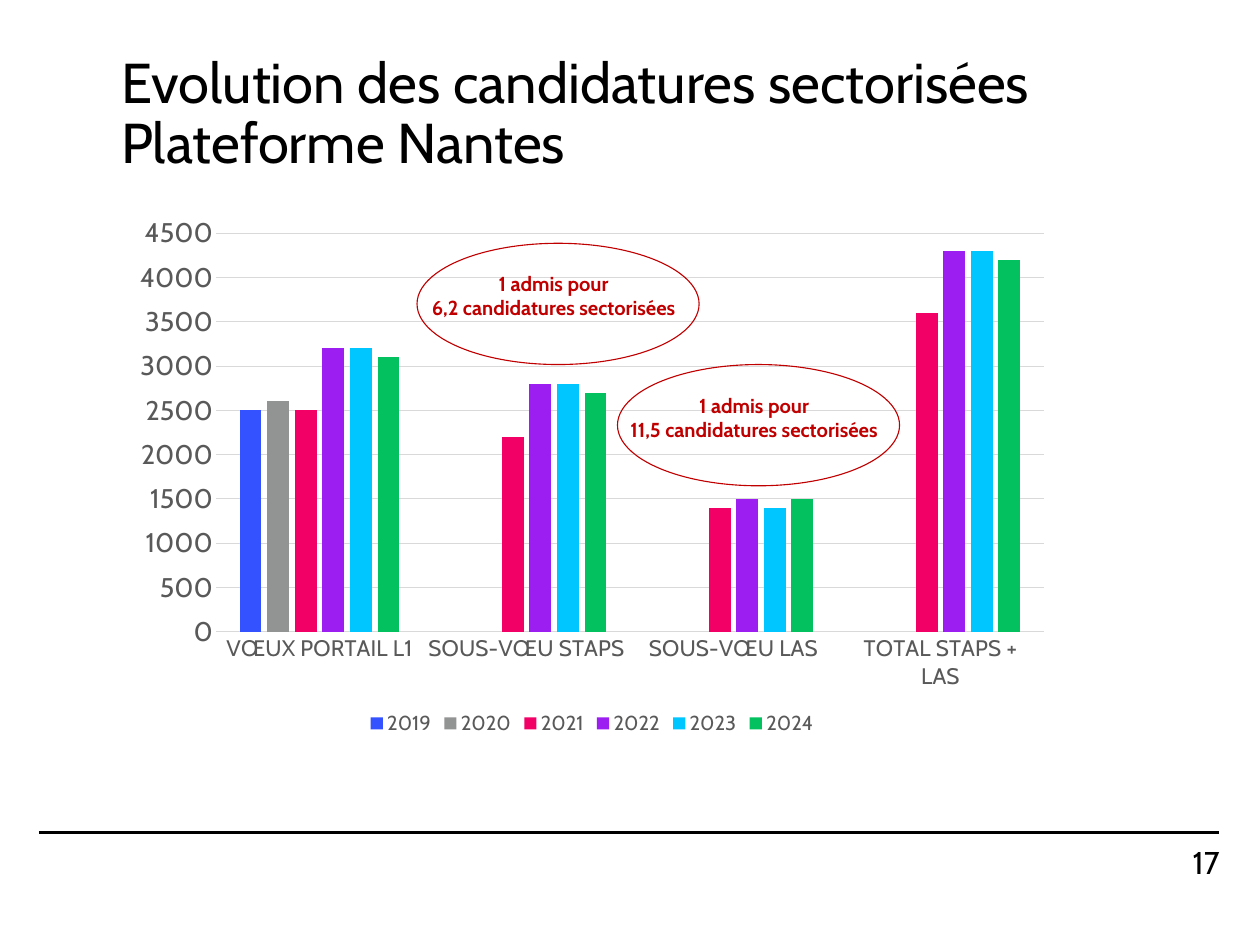
from dataclasses import dataclass
from typing import Optional

import pptx
import pptx.chart.data
import pptx.dml.color
import pptx.enum.chart
import pptx.enum.shapes
import pptx.enum.text
import pptx.oxml
import pptx.util

Pt = pptx.util.Pt
ALIGN = pptx.enum.text.PP_ALIGN
ANCHOR = pptx.enum.text.MSO_ANCHOR

FONT = "Cabin"
BLACK, GREY, GRID, RED = "000000", "595959", "D9D9D9", "C00000"


@dataclass
class YearSeries:
    year: str
    color: str
    values: tuple[Optional[int], ...]


@dataclass
class Callout:
    left: float
    top: float
    lines: tuple[str, ...]


CATEGORIES = ("VŒUX PORTAIL L1", "SOUS-VŒU STAPS", "SOUS-VŒU LAS", "TOTAL STAPS + LAS")
YEARS = (
    YearSeries("2019", "3452FF", (2500, None, None, None)),
    YearSeries("2020", "929393", (2600, None, None, None)),
    YearSeries("2021", "F20066", (2500, 2200, 1400, 3600)),
    YearSeries("2022", "9C1EF1", (3200, 2800, 1500, 4300)),
    YearSeries("2023", "00C6FF", (3200, 2800, 1400, 4300)),
    YearSeries("2024", "03C15E", (3100, 2700, 1500, 4200)),
)
CALLOUTS = (
    Callout(371.5, 216.7, ("1 admis pour", "6,2 candidatures sectorisées")),
    Callout(550.1, 324.7, ("1 admis pour", "11,5 candidatures sectorisées")),
)


def rgb(color: str) -> pptx.dml.color.RGBColor:
    return pptx.dml.color.RGBColor.from_string(color)


def set_font(font, size: float, color: str, bold: bool = False) -> None:
    font.name, font.size, font.bold = FONT, Pt(size), bold
    font.color.rgb = rgb(color)


def set_line(line, color: str, width: float) -> None:
    line.color.rgb = rgb(color)
    line.width = Pt(width)


def add_text(shapes, lines, left: float, top: float, width: float, height: float, *,
             size: float, color: str = BLACK, bold: bool = False, align=ALIGN.LEFT,
             anchor=ANCHOR.TOP, spacing: Optional[float] = None,
             inset: Optional[float] = None) -> None:
    sp = shapes.add_textbox(Pt(left), Pt(top), Pt(width), Pt(height))
    tf = sp.text_frame
    tf.word_wrap = True
    tf.vertical_anchor = anchor
    if inset is not None:
        tf.margin_left = tf.margin_top = tf.margin_right = tf.margin_bottom = Pt(inset)
    for i, line in enumerate(lines):
        p = tf.add_paragraph() if i else tf.paragraphs[0]
        p.alignment = align
        if spacing:
            p.line_spacing = spacing
        r = p.add_run()
        r.text = line
        set_font(r.font, size, color, bold)


def add_rule(s) -> None:
    sp = s.shapes.add_connector(pptx.enum.shapes.MSO_CONNECTOR.STRAIGHT,
                                Pt(34.6), Pt(741.6), Pt(1085.8), Pt(741.6))
    set_line(sp.line, BLACK, 2)
    ns = "http://schemas.openxmlformats.org/drawingml/2006/main"
    sp._element.spPr.append(pptx.oxml.parse_xml(f'<a:effectLst xmlns:a="{ns}"/>'))


def add_applications_chart(s) -> None:
    data = pptx.chart.data.CategoryChartData()
    data.categories = CATEGORIES
    for item in YEARS:
        data.add_series(item.year, item.values)
    chart = s.shapes.add_chart(pptx.enum.chart.XL_CHART_TYPE.COLUMN_CLUSTERED,
                               Pt(108), Pt(183.6), Pt(838.8), Pt(475.2), data).chart
    set_font(chart.font, 10, BLACK)
    chart.has_title = False

    # Columns
    plot = chart.plots[0]
    plot.gap_width, plot.overlap, plot.vary_by_categories = 219, -27, False
    for series, item in zip(plot.series, YEARS):
        series.format.fill.solid()
        series.format.fill.fore_color.rgb = rgb(item.color)

    # Axes
    cat, val = chart.category_axis, chart.value_axis
    for axis, size in ((cat, 20), (val, 24)):
        axis.major_tick_mark = axis.minor_tick_mark = pptx.enum.chart.XL_TICK_MARK.NONE
        set_font(axis.tick_labels.font, size, GREY)
    set_line(cat.format.line, GRID, 0.75)
    val.format.line.fill.background()
    val.minimum_scale, val.maximum_scale, val.major_unit = 0, 4500, 500
    val.has_major_gridlines = True
    set_line(val.major_gridlines.format.line, GRID, 0.75)

    # Legend
    chart.has_legend = True
    chart.legend.position = pptx.enum.chart.XL_LEGEND_POSITION.BOTTOM
    chart.legend.include_in_layout = False
    set_font(chart.legend.font, 18, GREY)


def add_callout(s, callout: Callout) -> None:
    shapes = s.shapes.add_group_shape().shapes
    add_text(shapes, callout.lines, callout.left - 11.5, callout.top + 21.6, 266.4, 51.1,
             size=18, color=RED, bold=True, align=ALIGN.CENTER)
    sp = shapes.add_shape(pptx.enum.shapes.MSO_SHAPE.OVAL, Pt(callout.left),
                          Pt(callout.top), Pt(251.3), Pt(108))
    sp.shadow.inherit = False
    sp.fill.background()
    set_line(sp.line, RED, 1)


def main() -> None:
    prs = pptx.Presentation()
    prs.slide_width, prs.slide_height = Pt(1122.5), Pt(841.7)
    s = prs.slides.add_slide(prs.slide_layouts[6])

    # Footer rule, chart and page number
    add_rule(s)
    add_applications_chart(s)
    add_text(s.shapes, ("17",), 921.6, 751, 164.9, 33.8, size=28,
             align=ALIGN.RIGHT, anchor=ANCHOR.MIDDLE, inset=0)

    # Title
    add_text(s.shapes, ("Evolution des candidatures sectorisées Plateforme Nantes",),
             100.8, 32.4, 988.6, 140.4, size=50, anchor=ANCHOR.MIDDLE, spacing=0.9)

    # Admission ratios
    for callout in CALLOUTS:
        add_callout(s, callout)

    prs.save("out.pptx")


if __name__ == "__main__":
    main()
